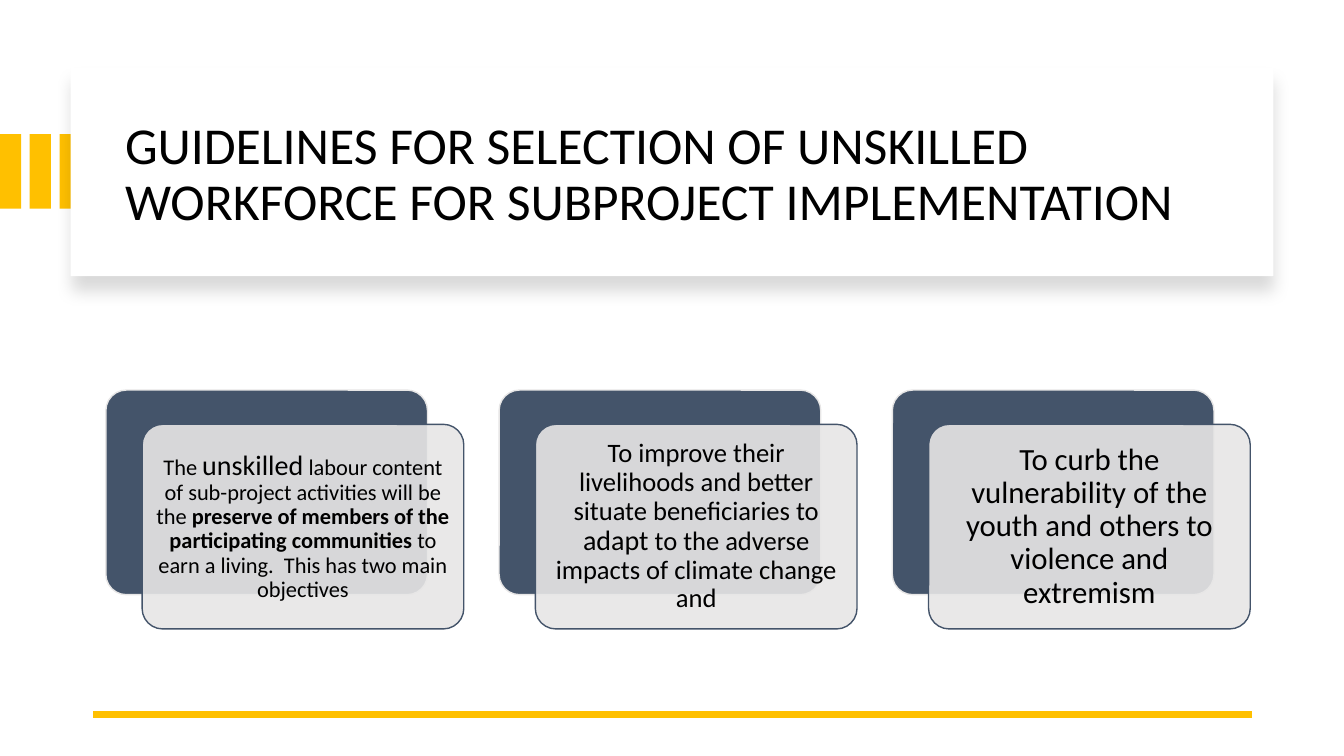
from lxml import etree
from pptx import Presentation
from pptx import util as u
from pptx.dml.color import RGBColor
from pptx.enum import shapes, text
from pptx.oxml.ns import qn

GOLD, NAVY, GREY, WHITE, BLACK = "FFC000", "44546A", "E7E6E6", "FFFFFF", "000000"
FONT = "Calibri"
TITLE = "GUIDELINES FOR SELECTION OF UNSKILLED WORKFORCE FOR SUBPROJECT IMPLEMENTATION"

# Each card: text inset, then runs of (wording, size, bold)
CARDS = [
    (0.07, [
        ("The ", 16, False),
        ("unskilled", 20, False),
        (" labour content of sub-project activities will be the ", 16, False),
        ("preserve of members of the participating communities ", 16, True),
        ("to earn a living.  This has two main objectives", 16, False),
    ]),
    (0.08, [
        ("To improve their livelihoods and better situate beneficiaries to ", 19, False),
        ("adapt", 20, False),
        (" to the adverse impacts of climate change and", 19, False),
    ]),
    (0.09, [
        ("To curb the vulnerability of the youth and others to violence and extremism",
         22, False),
    ]),
]


def colour(value):
    return RGBColor.from_string(value)


def inches(*lengths):
    return [u.Inches(length) for length in lengths]


def add_box(page, preset, box, fill, line=None):
    shape = page.shapes.add_shape(preset, *inches(*box))
    shape.shadow.inherit = False
    shape.fill.solid()
    shape.fill.fore_color.rgb = colour(fill)
    if line:
        shape.line.color.rgb = colour(line)
        shape.line.width = u.Pt(1)
    else:
        shape.line.fill.background()
    return shape


def write_runs(frame, runs, align):
    """Fill the first paragraph with runs of (wording, size, bold)."""
    frame.word_wrap = True
    frame.auto_size = text.MSO_AUTO_SIZE.NONE
    frame.vertical_anchor = text.MSO_ANCHOR.MIDDLE
    para = frame.paragraphs[0]
    para.alignment = align
    para.line_spacing = 0.9
    for wording, size, bold in runs:
        span = para.add_run()
        span.text = wording
        span.font.name = FONT
        span.font.size = u.Pt(size)
        span.font.bold = bold
        span.font.color.rgb = colour(BLACK)


def set_alpha(colour_element, percent):
    etree.SubElement(colour_element, qn("a:alpha"), val=str(percent * 1000))


def drop_shadow(shape):
    effects = shape._element.spPr.find(qn("a:effectLst"))
    shadow = etree.SubElement(
        effects, qn("a:outerShdw"), blurRad=str(u.Pt(11)), dist=str(u.Pt(10)),
        dir="5400000", algn="t", rotWithShape="0")
    set_alpha(etree.SubElement(shadow, qn("a:srgbClr"), val=BLACK), 15)


def add_header(page, left, top, width, height):
    for index in range(3):
        stripe = (index * 0.295, top + 0.66, 0.21, 0.74)
        add_box(page, shapes.MSO_SHAPE.RECTANGLE, stripe, GOLD)
    panel = add_box(page, shapes.MSO_SHAPE.RECTANGLE, (left, top, width, height), WHITE)
    drop_shadow(panel)

    title = page.shapes.title
    title.left, title.top, title.width, title.height = inches(
        left + 0.44, top + 0.22, width - 0.8, height - 0.37)
    write_runs(title.text_frame, [(TITLE, 37, False)], text.PP_ALIGN.LEFT)
    panel._element.addnext(title._element)  # bring the title in front of its panel


def add_card(page, left, top, width, height, inset, runs):
    """Place a navy back plate and a translucent text plate shifted over it."""
    rounded = shapes.MSO_SHAPE.ROUNDED_RECTANGLE
    back = add_box(page, rounded, (left, top, width, height), NAVY, GREY)
    front = add_box(page, rounded, (left + 0.36, top + 0.34, width, height), GREY, NAVY)
    for plate in (back, front):
        plate.adjustments[0] = 0.1
    set_alpha(front._element.spPr.find(qn("a:solidFill"))[0], 90)
    frame = front.text_frame
    frame.margin_left = frame.margin_right = u.Inches(inset)
    frame.margin_top = frame.margin_bottom = u.Inches(inset)
    write_runs(frame, runs, text.PP_ALIGN.CENTER)


def add_card_row(page, left, top, width, height, gap):
    card_width = (width - gap * (len(CARDS) - 1)) / len(CARDS)
    for index, (inset, runs) in enumerate(CARDS):
        card_left = left + index * (card_width + gap)
        add_card(page, card_left, top, card_width, height, inset, runs)


def add_footer_rule(page, left, right, y):
    rule = page.shapes.add_connector(
        shapes.MSO_CONNECTOR.STRAIGHT, *inches(right, y, left, y))
    rule.line.color.rgb = colour(GOLD)
    rule.line.width = u.Pt(4.5)
    etree.SubElement(rule._element.spPr, qn("a:effectLst"))


def main():
    deck = Presentation()
    deck.slide_width, deck.slide_height = inches(13.33, 7.5)
    page = deck.slides.add_slide(deck.slide_layouts[5])
    page.background.fill.solid()
    page.background.fill.fore_color.rgb = colour(WHITE)
    add_header(page, 0.7, 0.67, 11.93, 2.07)
    add_footer_rule(page, 0.92, 12.42, 7.09)
    add_card_row(page, 1.05, 3.87, 10.99, 2.03, gap=0.71)
    deck.save("out.pptx")


if __name__ == "__main__":
    main()
